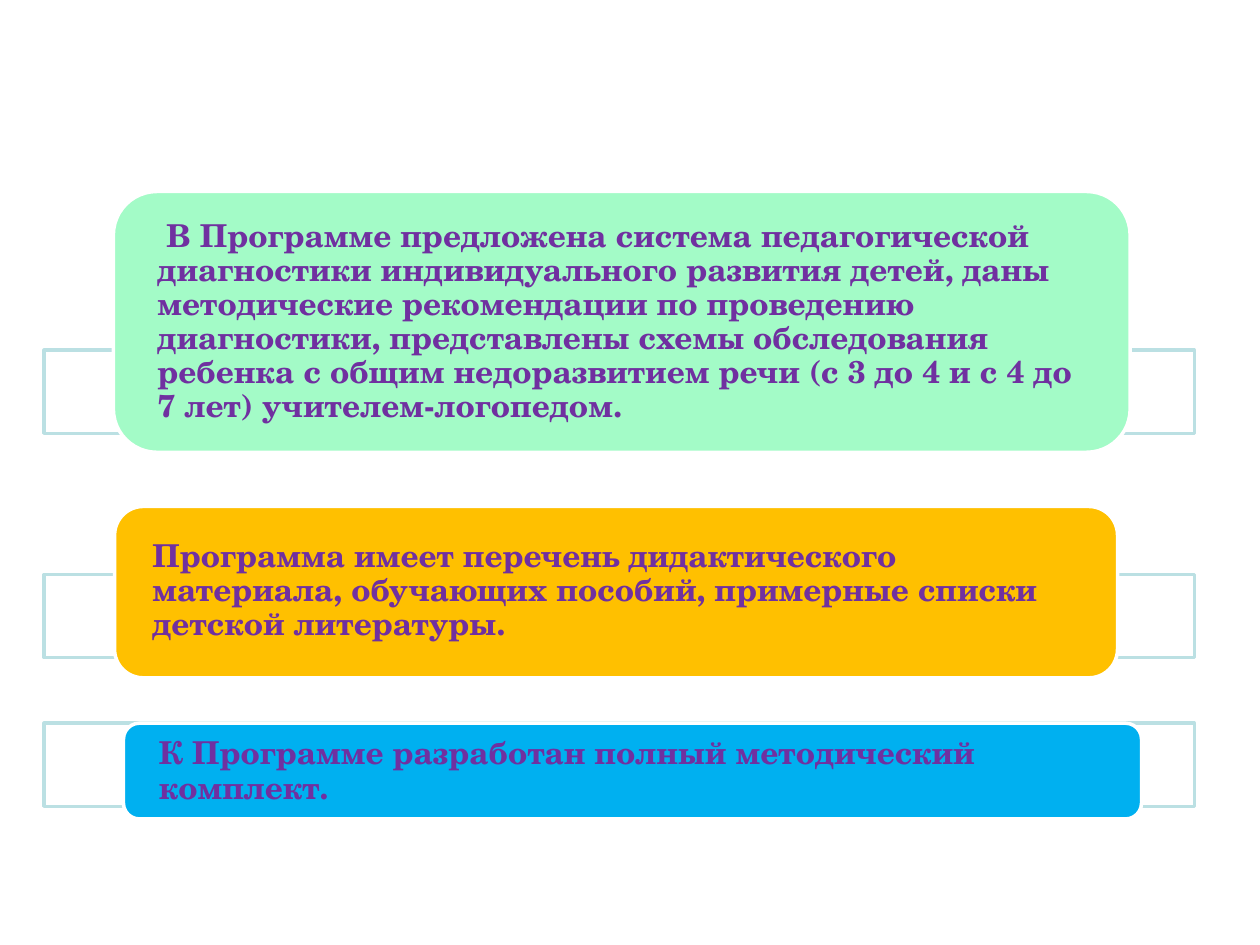
from lxml import etree
from pptx import Presentation
from pptx.dml.color import RGBColor
from pptx.enum.shapes import MSO_SHAPE
from pptx.enum.text import MSO_ANCHOR
from pptx.oxml.ns import qn
from pptx.util import Inches, Pt

COLORS = {
    "white": "FFFFFF",
    "frame": "BBE0E3",
    "text": "7030A0",
    "green": "A3FBC7",
    "amber": "FFC000",
    "blue": "00B0F0",
}
FONT = "TeX Gyre Schola"


class SlideBuilder:
    def __init__(self, slide):
        self.slide = slide

    def color(self, name):
        return RGBColor.from_string(COLORS[name])

    def shape(self, kind, box, fill, line):
        sp = self.slide.shapes.add_shape(kind, *map(Inches, box))
        sp.shadow.inherit = False
        sp.fill.solid()
        sp.fill.fore_color.rgb = self.color(fill)
        sp.line.color.rgb = self.color(line)
        sp.line.width = Pt(2)
        return sp

    def frame(self, top):
        sp = self.shape(MSO_SHAPE.RECTANGLE, (0.35, top, 9.13, 0.66), "white", "frame")
        clr = sp.fill._xPr.find(qn("a:solidFill"))[0]
        etree.SubElement(clr, qn("a:alpha")).set("val", "90000")

    def card(self, box, fill):
        self.shape(MSO_SHAPE.ROUNDED_RECTANGLE, box, fill, "white")

    def text(self, box, text, indent):
        tb = self.slide.shapes.add_textbox(*map(Inches, box))
        tf = tb.text_frame
        tf.word_wrap = True
        tf.vertical_anchor = MSO_ANCHOR.MIDDLE
        tf.margin_left = tf.margin_right = Inches(0.24)
        tf.margin_top = tf.margin_bottom = 0
        tf.text = text
        p = tf.paragraphs[0]
        p.line_spacing = 0.9
        if indent:
            p._p.get_or_add_pPr().set("indent", str(Inches(indent)))
        font = p.runs[0].font
        font.name = FONT
        font.size = Pt(18)
        font.bold = True
        font.color.rgb = self.color("text")


# Frame top, card box, card fill, text box, first-line indent, text
ROWS = [
    (2.78, (0.9, 1.52, 8.07, 2.07), "green", (1.01, 1.62, 7.87, 1.87), 0.07,
     "В Программе предложена система педагогической диагностики "
     "индивидуального развития детей, даны методические рекомендации "
     "по проведению диагностики, представлены схемы обследования ребенка "
     "с общим недоразвитием речи (с 3 до 4 и с 4 до 7 лет) "
     "учителем-логопедом."),
    (4.56, (0.91, 4.02, 7.96, 1.36), "amber", (0.97, 4.08, 7.83, 1.23), 0,
     "Программа имеет перечень дидактического материала, обучающих пособий, "
     "примерные списки детской литературы."),
    (5.74, (0.98, 5.74, 8.08, 0.76), "blue", (1.02, 5.78, 8.01, 0.69), 0,
     "К Программе разработан полный методический комплект."),
]


def main():
    prs = Presentation()
    prs.slide_width, prs.slide_height = Inches(10), Inches(7.5)
    s = SlideBuilder(prs.slides.add_slide(prs.slide_layouts[6]))

    # Each row: outlined frame, coloured card, statement
    for frame_top, card_box, fill, text_box, indent, text in ROWS:
        s.frame(frame_top)
        s.card(card_box, fill)
        s.text(text_box, text, indent)

    prs.save("out.pptx")


if __name__ == "__main__":
    main()
